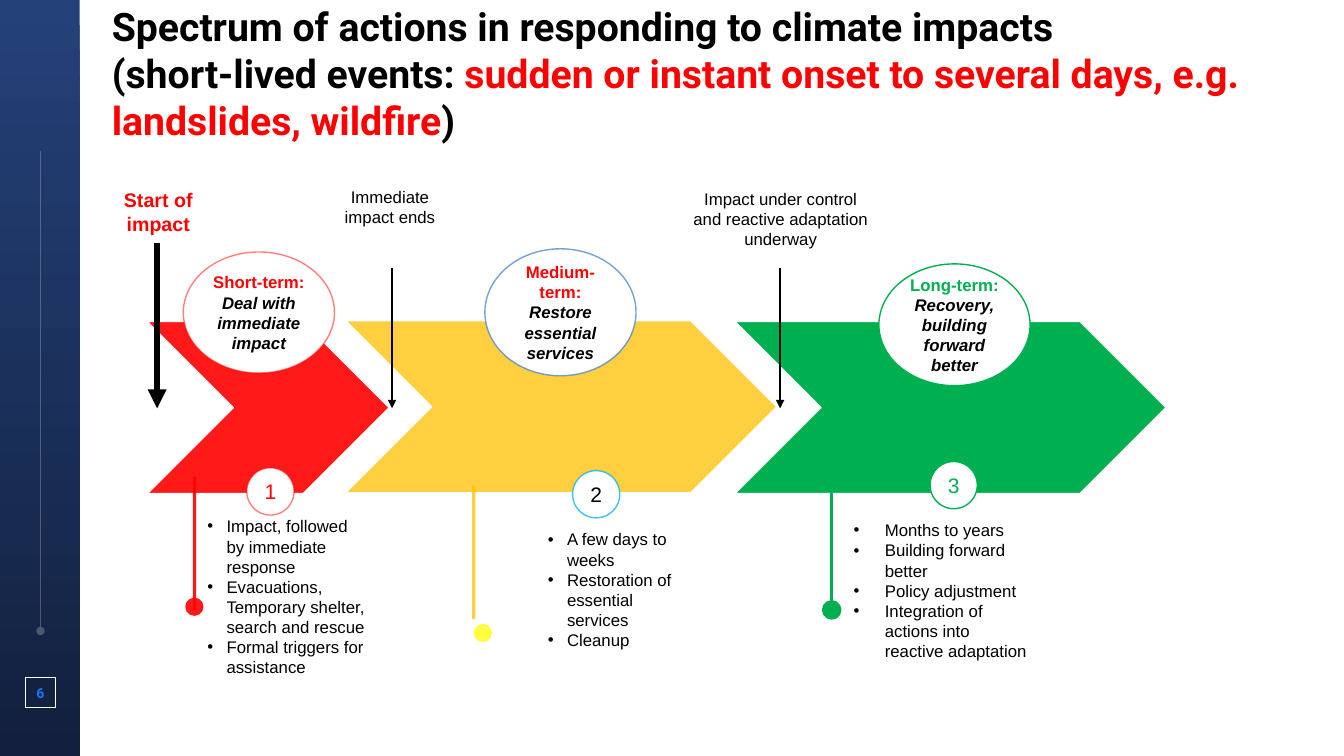
import lxml.etree
import pptx
import pptx.dml.color
import pptx.enum.shapes
import pptx.enum.text
import pptx.oxml.ns
import pptx.util

Cm = pptx.util.Cm
Pt = pptx.util.Pt
RGBColor = pptx.dml.color.RGBColor
SHAPE = pptx.enum.shapes.MSO_SHAPE
ALIGN = pptx.enum.text.PP_ALIGN
ANCHOR = pptx.enum.text.MSO_ANCHOR
qn = pptx.oxml.ns.qn

BLACK = RGBColor(0x00, 0x00, 0x00)
WHITE = RGBColor(0xFF, 0xFF, 0xFF)
RED = RGBColor(0xFF, 0x00, 0x00)
AMBER = RGBColor(0xFF, 0xC0, 0x00)
YELLOW = RGBColor(0xFF, 0xFF, 0x00)
GREEN = RGBColor(0x00, 0xB0, 0x50)
BLUE = RGBColor(0x43, 0x85, 0xC7)
SKY = RGBColor(0x00, 0xB0, 0xF0)
PAGE_BLUE = RGBColor(0x17, 0x75, 0xF9)
NAVY_TOP = RGBColor(0x24, 0x41, 0x79)
NAVY_BOTTOM = RGBColor(0x12, 0x20, 0x3D)


class Board:
    def __init__(self, slide, font="Arial", size=12):
        self.slide = slide
        self.font = font
        self.size = size

    def fade(self, parent, opacity):
        if opacity < 100:
            color = next(parent.iter(qn("a:srgbClr")))
            lxml.etree.SubElement(color, qn("a:alpha"), val=str(opacity * 1000))

    def shape(self, kind, box, fill=None, opacity=100, line=None, line_opacity=100, width=1):
        shape = self.slide.shapes.add_shape(kind, *map(Cm, box))
        shape.shadow.inherit = False
        if fill is None:
            shape.fill.background()
        else:
            shape.fill.solid()
            shape.fill.fore_color.rgb = fill
            self.fade(shape.element.spPr.find(qn("a:solidFill")), opacity)
        if line is None:
            shape.line.fill.background()
        else:
            shape.line.color.rgb = line
            shape.line.width = Pt(width)
            self.fade(shape.element.spPr.find(qn("a:ln")), line_opacity)
        return shape

    def line(self, x, start, end, color, width, opacity=100, head=None):
        connector = self.slide.shapes.add_connector(
            pptx.enum.shapes.MSO_CONNECTOR.STRAIGHT, Cm(x), Cm(start), Cm(x), Cm(end))
        connector.line.color.rgb = color
        connector.line.width = Pt(width)
        properties = connector.element.spPr
        outline = properties.find(qn("a:ln"))
        self.fade(outline, opacity)
        if head:
            lxml.etree.SubElement(outline, qn("a:headEnd"), type=head)
        lxml.etree.SubElement(properties, qn("a:effectLst"))

    def add_runs(self, paragraph, runs, size=None, font=None, align=ALIGN.CENTER):
        paragraph.alignment = align
        for text, color, bold, italic in runs:
            for index, part in enumerate(text.split("\n")):
                if index:
                    paragraph.add_line_break()
                if part:
                    run = paragraph.add_run()
                    run.text = part
                    run.font.name = font or self.font
                    run.font.size = Pt(size or self.size)
                    run.font.bold = bold
                    run.font.italic = italic
                    run.font.color.rgb = color

    def no_insets(self, frame):
        frame.margin_left = frame.margin_right = frame.margin_top = frame.margin_bottom = 0

    def disc(self, box, outline, outline_opacity, runs, size=None):
        frame = self.shape(SHAPE.OVAL, box, WHITE, line=outline,
                           line_opacity=outline_opacity).text_frame
        frame.word_wrap = True
        frame.vertical_anchor = ANCHOR.MIDDLE
        self.no_insets(frame)
        self.add_runs(frame.paragraphs[0], runs, size)

    def text_frame(self, box):
        frame = self.slide.shapes.add_textbox(*map(Cm, box)).text_frame
        frame.word_wrap = True
        frame.auto_size = pptx.enum.text.MSO_AUTO_SIZE.SHAPE_TO_FIT_TEXT
        return frame

    def label(self, box, runs, size=None):
        self.add_runs(self.text_frame(box).paragraphs[0], runs, size)

    def heading(self, box, runs, size, align):
        frame = self.text_frame(box)
        frame.vertical_anchor = ANCHOR.MIDDLE
        self.no_insets(frame)
        self.add_runs(frame.paragraphs[0], runs, size, "Roboto", align)

    def bullets(self, box, indent, items):
        frame = self.text_frame(box)
        for index, item in enumerate(items):
            paragraph = frame.add_paragraph() if index else frame.paragraphs[0]
            properties = paragraph._p.get_or_add_pPr()
            properties.set("marL", str(Cm(indent)))
            properties.set("indent", str(-Cm(indent)))
            lxml.etree.SubElement(properties, qn("a:buFont"), typeface="Arial")
            lxml.etree.SubElement(properties, qn("a:buChar"), char="•")
            self.add_runs(paragraph, [(item, BLACK, False, False)], align=ALIGN.LEFT)


STAGES = [
    dict(chevron=(3.71, 8.1, 6.1, 4.34), color=RED, opacity=90,
         stem=(4.9, 12.01), dot=(4.67, 15.06), dot_color=RED, dot_line=None,
         bubble=(4.62, 6.35, 3.81, 3.05), bubble_line=RED, outline_opacity=50,
         term="Short-term: ", term_color=RED, goal="Deal with immediate impact",
         badge=(6.22, 11.79), badge_line=RED, number_color=RED,
         details=(4.98, 12.88, 4.5, 4.37), indent=0.48,
         items=["Impact, followed by immediate response",
                "Evacuations, Temporary shelter, search and rescue",
                "Formal triggers for assistance"]),
    dict(chevron=(8.71, 8.08, 10.87, 4.34), color=AMBER, opacity=75,
         stem=(11.94, 12.24), dot=(11.94, 15.72), dot_color=YELLOW, dot_line=None,
         bubble=(12.22, 6.27, 3.81, 3.2), bubble_line=BLUE, outline_opacity=75,
         term="Medium-term: ", term_color=RED, goal="Restore essential services",
         badge=(14.43, 11.86), badge_line=SKY, number_color=BLACK,
         details=(13.56, 13.21, 3.91, 3.33), indent=0.48,
         items=["A few days to weeks", "Restoration of essential services", "Cleanup"]),
    dict(chevron=(18.52, 8.1, 10.87, 4.34), color=GREEN, opacity=100,
         stem=(20.96, 12.09), dot=(20.73, 15.14), dot_color=GREEN, dot_line=GREEN,
         bubble=(22.15, 6.65, 3.81, 3.07), bubble_line=GREEN, outline_opacity=100,
         term="Long-term:\n", term_color=GREEN, goal="Recovery, building forward better",
         badge=(23.44, 11.63), badge_line=GREEN, number_color=GREEN,
         details=(21.26, 12.98, 4.98, 3.84), indent=0.79,
         items=["Months to years", "Building forward better", "Policy adjustment",
                "Integration of actions into reactive adaptation"]),
]

MILESTONES = [
    ("Start of impact", (2.82, 4.62, 2.34, 1.45), RED, True, 14, 3.96, 6.12, 4.5),
    ("Immediate impact ends", (8.38, 4.57, 2.9, 1.27), BLACK, False, 12, 9.88, 6.76, 1),
    ("Impact under control and reactive adaptation underway",
     (17.2, 4.62, 4.95, 1.8), BLACK, False, 12, 19.66, 6.76, 1),
]


def main():
    deck = pptx.Presentation()
    deck.slide_width, deck.slide_height = Cm(33.87), Cm(19.05)
    board = Board(deck.slides.add_slide(deck.slide_layouts[6]))

    sidebar = board.shape(SHAPE.RECTANGLE, (0, 0, 2.01, 19.05))
    sidebar.fill.gradient()
    sidebar.fill.gradient_angle = 270
    for stop, color in zip(sidebar.fill.gradient_stops, (NAVY_TOP, NAVY_BOTTOM)):
        stop.color.rgb = color
    board.line(1.02, 15.9, 3.81, WHITE, 0.5, 24, "oval")
    board.shape(SHAPE.RECTANGLE, (0.64, 17.07, 0.76, 0.76), line=WHITE, width=0.5)

    board.heading((2.82, 0.05, 30.12, 3.58), [
        ("Spectrum of actions in responding to climate impacts\n(short-lived events: ",
         BLACK, True, False),
        ("sudden or instant onset to several days, e.g. landslides, wildfire",
         RED, True, False),
        (")", BLACK, True, False)], 28, ALIGN.LEFT)
    board.heading((0.64, 17.25, 0.76, 0.43), [("6", PAGE_BLUE, True, False)], 10, ALIGN.CENTER)

    for number, stage in enumerate(STAGES, 1):
        board.shape(SHAPE.CHEVRON, stage["chevron"], stage["color"], stage["opacity"], WHITE)
        x, top = stage["stem"]
        board.line(x, top, top + 3.36, stage["color"], 2.25, stage["opacity"])
        board.shape(SHAPE.OVAL, (*stage["dot"], 0.46, 0.46), stage["dot_color"],
                    stage["opacity"], stage["dot_line"])
        board.disc(stage["bubble"], stage["bubble_line"], stage["outline_opacity"],
                   [(stage["term"], stage["term_color"], True, False),
                    (stage["goal"], BLACK, True, True)])
        board.disc((*stage["badge"], 1.19, 1.19), stage["badge_line"], stage["outline_opacity"],
                   [(str(number), stage["number_color"], False, False)], 15)
        board.bullets(stage["details"], stage["indent"], stage["items"])

    for text, box, color, bold, size, x, top, width in MILESTONES:
        board.label(box, [(text, color, bold, False)], size)
        board.line(x, 10.29, top, BLACK, width, head="triangle")

    deck.save("out.pptx")


if __name__ == "__main__":
    main()
